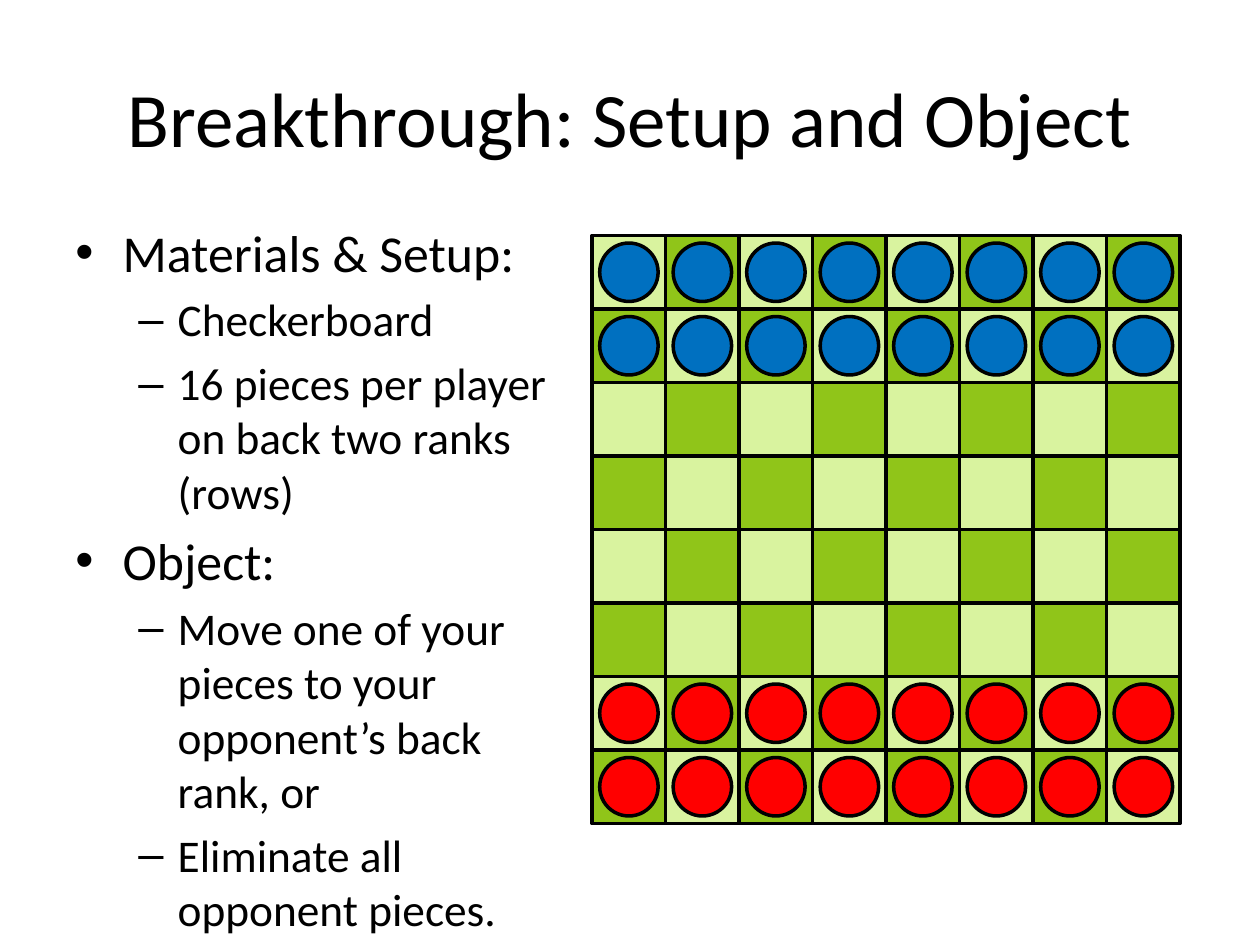
from lxml.etree import SubElement
from pptx import Presentation
from pptx.dml.color import RGBColor
from pptx.enum.shapes import MSO_SHAPE
from pptx.enum.text import MSO_ANCHOR, PP_ALIGN
from pptx.oxml.ns import qn
from pptx.util import Pt

BLACK = RGBColor(0x00, 0x00, 0x00)
LIGHT = RGBColor(0xD9, 0xF3, 0x9F)
DARK = RGBColor(0x90, 0xC5, 0x19)
BLUE = RGBColor(0x00, 0x70, 0xC0)
RED = RGBColor(0xFF, 0x00, 0x00)

TITLE = "Breakthrough: Setup and Object"
BULLETS = [
    (0, "Materials & Setup:"),
    (1, "Checkerboard"),
    (1, "16 pieces per player on back two ranks (rows)"),
    (0, "Object:"),
    (1, "Move one of your pieces to your opponent’s back rank, or"),
    (1, "Eliminate all opponent pieces."),
]
LEVELS = [
    {"size": 29.6, "margin": 27, "hang": 27, "bullet": "•"},
    {"size": 25.9, "margin": 58.5, "hang": 22.5, "bullet": "–"},
]
PIECE_ROWS = {0: BLUE, 1: BLUE, 6: RED, 7: RED}

RANKS = 8
BOARD_LEFT, BOARD_TOP = 338.4, 134.6
SQUARE, PIECE = 42, 33.4
INSET = (SQUARE - PIECE) / 2


def add_text_frame(slide, left, top, width, height, anchor):
    box = slide.shapes.add_textbox(Pt(left), Pt(top), Pt(width), Pt(height))
    tf = box.text_frame
    tf.word_wrap = True
    tf.vertical_anchor = anchor
    return tf


def add_run(p, text, size):
    r = p.add_run()
    r.text = text
    for name, value in {"name": "Calibri", "size": Pt(size)}.items():
        setattr(r.font, name, value)
    r.font.color.rgb = BLACK


def set_bullet(p, level):
    pPr = p._p.get_or_add_pPr()
    pPr.set("marL", str(Pt(level["margin"])))
    pPr.set("indent", str(-Pt(level["hang"])))
    SubElement(pPr, qn("a:buFont"), typeface="Arial")
    SubElement(pPr, qn("a:buChar"), char=level["bullet"])


def add_outlined(group, kind, left, top, size, color):
    s = group.shapes.add_shape(kind, Pt(left), Pt(top), Pt(size), Pt(size))
    s.shadow.inherit = False
    s.fill.solid()
    s.fill.fore_color.rgb = color
    s.line.color.rgb = BLACK
    s.line.width = Pt(2)


def add_board(slide):
    board = slide.shapes.add_group_shape()
    cells = [(row, col) for row in range(RANKS) for col in range(RANKS)]
    for row, col in cells:
        color = DARK if (row + col) % 2 else LIGHT
        add_outlined(board, MSO_SHAPE.RECTANGLE, BOARD_LEFT + col * SQUARE,
                     BOARD_TOP + row * SQUARE, SQUARE, color)
    for row, col in cells:
        if row in PIECE_ROWS:
            add_outlined(board, MSO_SHAPE.OVAL, BOARD_LEFT + col * SQUARE + INSET,
                         BOARD_TOP + row * SQUARE + INSET, PIECE, PIECE_ROWS[row])


def main():
    prs = Presentation()
    prs.slide_width, prs.slide_height = Pt(720), Pt(540)
    slide = prs.slides.add_slide(prs.slide_layouts[6])

    tf = add_text_frame(slide, 36, 21.6, 648, 90, MSO_ANCHOR.MIDDLE)
    p = tf.paragraphs[0]
    p.alignment = PP_ALIGN.CENTER
    add_run(p, TITLE, 44)

    tf = add_text_frame(slide, 36, 122.4, 288, 356.4, MSO_ANCHOR.TOP)
    for i, (depth, text) in enumerate(BULLETS):
        level = LEVELS[depth]
        p = tf.add_paragraph() if i else tf.paragraphs[0]
        p.level = depth
        p.space_before = Pt(round(level["size"] * 0.2, 1))
        set_bullet(p, level)
        add_run(p, text, level["size"])

    add_board(slide)
    prs.save("out.pptx")


if __name__ == "__main__":
    main()
